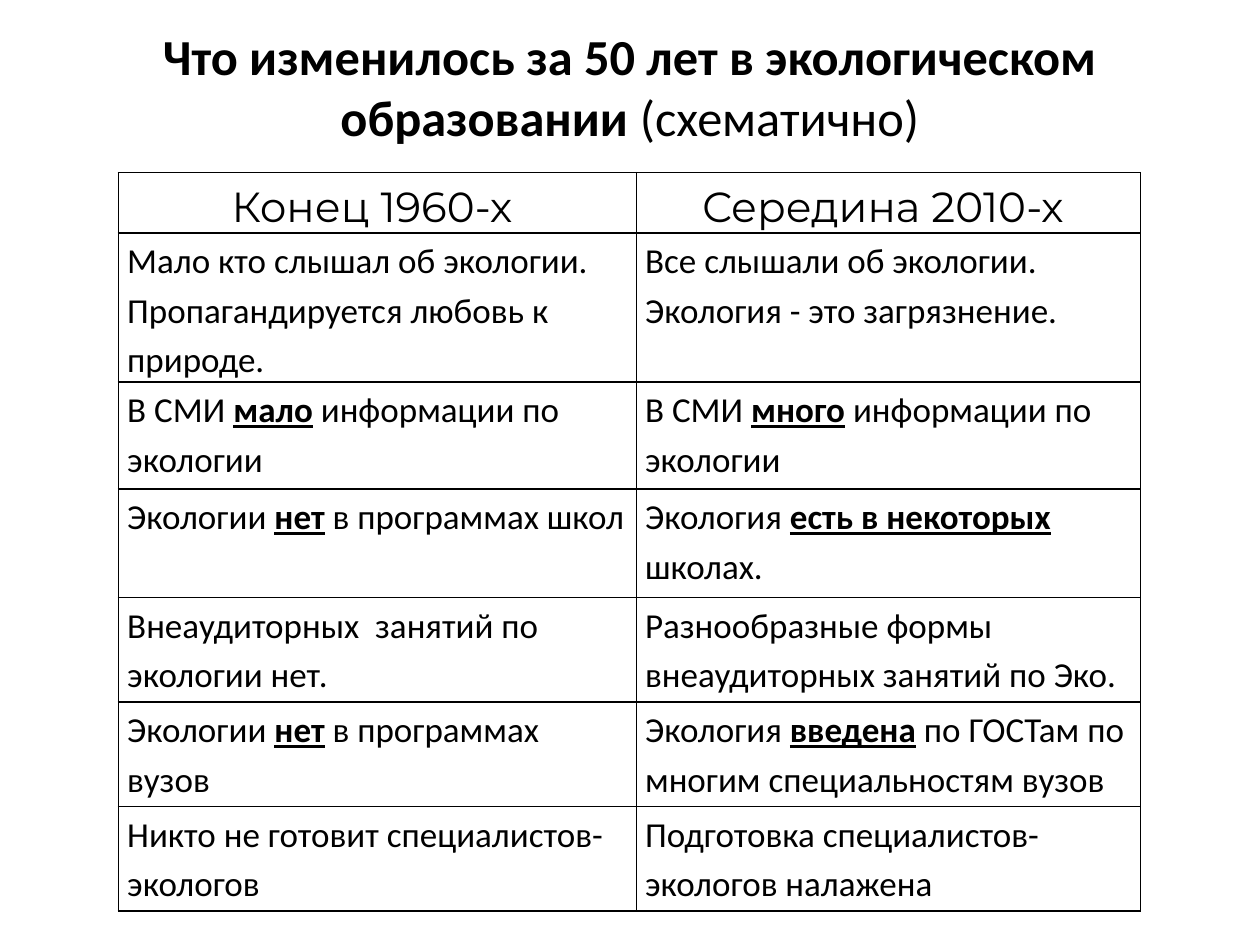
import pptx
import pptx.dml.color
import pptx.enum.text
import pptx.oxml
import pptx.oxml.ns
import pptx.util
from pptx.util import Inches

# A text is a list of (words, emphasized) runs.
TITLE = [("Что изменилось за 50 лет в экологическом образовании ", True),
         ("(схематично)", False)]
HEADINGS = ("Конец 1960-х ", "Середина 2010-х ")
# Emphasized words stand between asterisks.
COMPARISONS = [
    ("Мало кто слышал об экологии. Пропагандируется любовь к природе.",
     "Все слышали об экологии. Экология - это загрязнение."),
    ("В СМИ *мало* информации по экологии",
     "В СМИ *много* информации по экологии"),
    ("Экологии *нет* в программах школ",
     "Экология *есть в некоторых *школах."),
    ("Внеаудиторных  занятий по экологии нет.",
     "Разнообразные формы внеаудиторных занятий по Эко."),
    ("Экологии *нет* в программах вузов",
     "Экология *введена* по ГОСТам по многим специальностям вузов"),
    ("Никто не готовит специалистов-экологов",
     "Подготовка специалистов-экологов налажена"),
]
COLUMN_WIDTHS = (4.11, 4)
ROW_HEIGHTS = (0.38, 1.14, 0.85, 0.86, 0.83, 0.83, 0.83)

THEME = {
    "ink": "000000",
    "background": "FFFFFF",
    "body_font": "Calibri",
    "heading_font": "Montserrat",
    "title_size": 28.8,
    "heading_size": 24,
    "body_size": 20,
    "border_width": 1,
}
CENTER = pptx.enum.text.PP_ALIGN.CENTER
LEFT = pptx.enum.text.PP_ALIGN.LEFT


def split_emphasis(text):
    return [(words, index % 2 == 1)
            for index, words in enumerate(text.split("*")) if words]


def write_runs(paragraph, runs, font_name, size, alignment, underline=False):
    paragraph.alignment = alignment
    for words, emphasized in runs:
        run = paragraph.add_run()
        run.text = words
        run.font.name = font_name
        run.font.size = pptx.util.Pt(size)
        run.font.color.rgb = pptx.dml.color.RGBColor.from_string(THEME["ink"])
        run.font.bold = emphasized
        run.font.underline = emphasized and underline


def add_borders(cell):
    properties = cell._tc.get_or_add_tcPr()
    width = pptx.util.Pt(THEME["border_width"])
    for side in ("lnL", "lnR", "lnT", "lnB"):
        properties.append(pptx.oxml.parse_xml(
            f'<a:{side} {pptx.oxml.ns.nsdecls("a")} w="{width}"><a:solidFill>'
            f'<a:srgbClr val="{THEME["ink"]}"/></a:solidFill></a:{side}>'))


def format_cell(cell, runs, font_name, size, alignment):
    cell.margin_left = cell.margin_right = Inches(0.07)
    cell.margin_top = Inches(0.01)
    cell.margin_bottom = 0
    add_borders(cell)
    cell.fill.background()
    paragraph = cell.text_frame.paragraphs[0]
    paragraph.line_spacing = 1.15
    paragraph.space_after = pptx.util.Pt(10)
    write_runs(paragraph, runs, font_name, size, alignment, underline=True)


def add_title(slide):
    title = slide.shapes.title
    title.left, title.top = Inches(0.5), Inches(0.21)
    title.width, title.height = Inches(9), Inches(0.94)
    frame = title.text_frame
    frame.word_wrap = True
    frame.auto_size = pptx.enum.text.MSO_AUTO_SIZE.NONE
    frame.vertical_anchor = pptx.enum.text.MSO_ANCHOR.MIDDLE
    write_runs(frame.paragraphs[0], TITLE, THEME["body_font"],
               THEME["title_size"], CENTER)


def add_comparison_table(slide):
    table = slide.shapes.add_table(
        len(ROW_HEIGHTS), len(COLUMN_WIDTHS), Inches(0.94), Inches(1.37),
        Inches(sum(COLUMN_WIDTHS)), Inches(sum(ROW_HEIGHTS))).table
    table.first_row = table.horz_banding = False
    for column, width in zip(table.columns, COLUMN_WIDTHS):
        column.width = Inches(width)
    for row, height in zip(table.rows, ROW_HEIGHTS):
        row.height = Inches(height)

    heading_style = (THEME["heading_font"], THEME["heading_size"], CENTER)
    body_style = (THEME["body_font"], THEME["body_size"], LEFT)
    for row_index, texts in enumerate([HEADINGS] + COMPARISONS):
        style = body_style if row_index else heading_style
        for column_index, text in enumerate(texts):
            format_cell(table.cell(row_index, column_index),
                        split_emphasis(text), *style)


def main():
    presentation = pptx.Presentation()
    presentation.slide_width = Inches(10)
    presentation.slide_height = Inches(7.5)
    slide = presentation.slides.add_slide(presentation.slide_layouts[5])
    background = slide.background.fill
    background.solid()
    background.fore_color.rgb = pptx.dml.color.RGBColor.from_string(
        THEME["background"])
    add_title(slide)
    add_comparison_table(slide)
    presentation.save("out.pptx")


if __name__ == "__main__":
    main()
